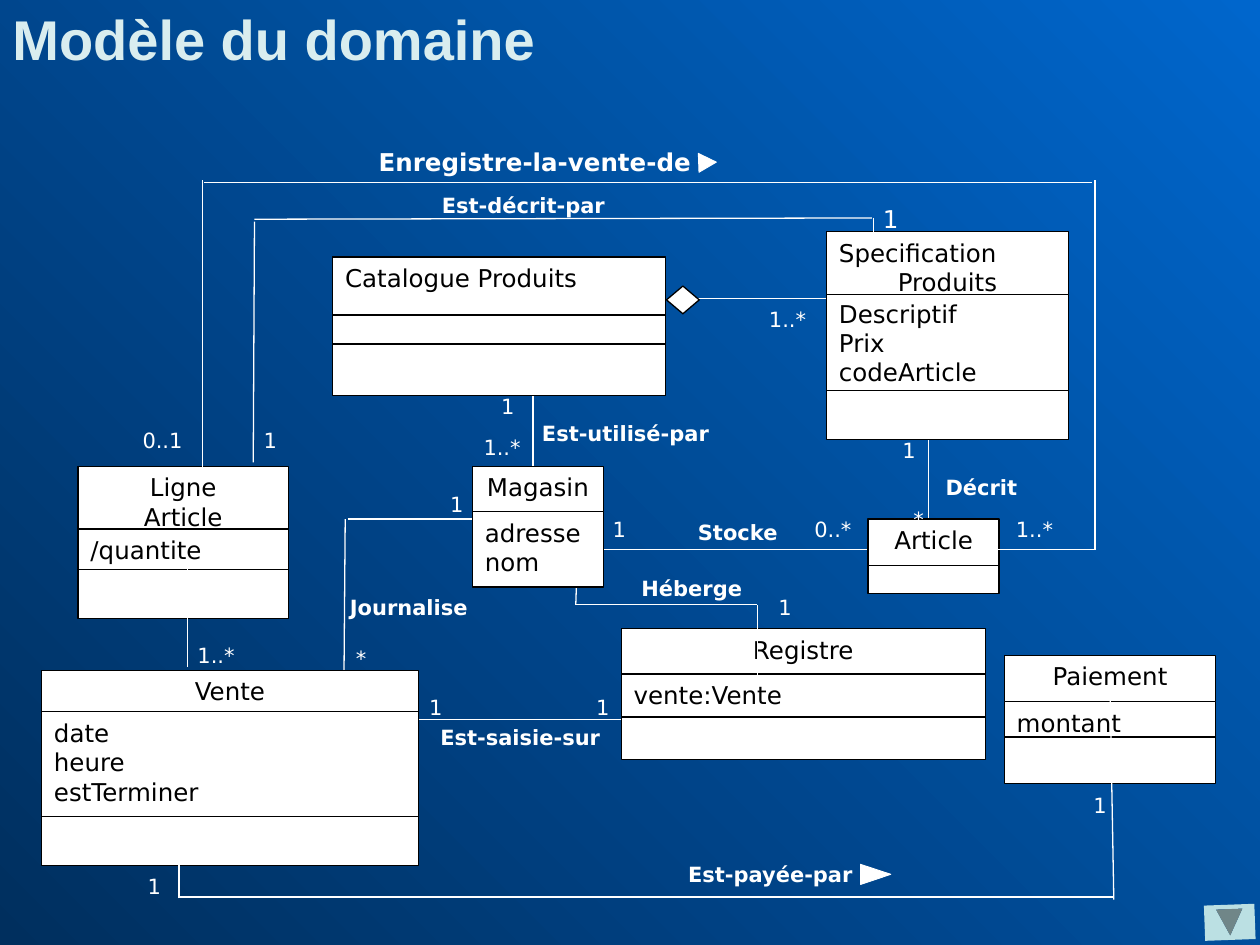
from pptx import Presentation
from pptx import util as u
from pptx.dml import color
from pptx.enum import shapes, text
from pptx.oxml import ns
from lxml import etree

SANS = "DejaVu Sans"
LEFT, MID = text.PP_ALIGN.LEFT, text.PP_ALIGN.CENTER
KIND = shapes.MSO_SHAPE

# Each class: left, width, then compartments of (top, height, lines, alignments)
CLASSES = {
    "Catalogue": (2.64, 2.64, [(2.04, 0.47, ["Catalogue Produits"], [LEFT]),
                               (2.5, 0.23, [], []), (2.73, 0.41, [], [])]),
    "Specification": (6.56, 1.92, [
        (2.32, 0.78, ["Descriptif", "Prix", "codeArticle"], [LEFT] * 3),
        (1.84, 0.5, ["Specification", "Produits"], [LEFT, MID]),
        (3.1, 0.39, [], [])]),
    "Magasin": (3.75, 1.04, [(3.7, 0.38, ["Magasin"], [MID]),
                             (4.06, 0.6, ["adresse", "nom"], [LEFT] * 2)]),
    "Article": (6.89, 1.04, [(4.12, 0.37, ["Article"], [MID]),
                             (4.49, 0.22, [], [])]),
    "Ligne": (0.62, 1.67, [(3.7, 0.5, ["Ligne", "Article"], [MID] * 2),
                           (4.2, 0.32, ["/quantite"], [LEFT]),
                           (4.52, 0.39, [], [])]),
    "Vente": (0.33, 2.99, [
        (5.32, 0.33, ["Vente"], [MID]),
        (5.65, 0.84, ["date", "heure", "estTerminer"], [LEFT] * 3),
        (6.48, 0.39, [], [])]),
    "Registre": (4.93, 2.89, [(4.99, 0.38, ["Registre"], [MID]),
                              (5.69, 0.34, [], []),
                              (5.35, 0.34, ["vente:Vente"], [LEFT])]),
    "Paiement": (7.97, 1.68, [(5.57, 0.28, ["montant"], [LEFT]),
                              (5.2, 0.37, ["Paiement"], [MID]),
                              (5.85, 0.37, [], [])]),
}

BACK = {
    "contient": (5.36, 2.37, 6.56, 2.37),
    "utilise": (4.23, 2.99, 4.23, 3.7),
    "heberge": (4.58, 4.48, 4.57, 4.8),
    "stocke": (4.79, 4.36, 6.89, 4.36),
    "decrit": (7.37, 3.49, 7.37, 4.12),
    "saisie": (3.07, 5.71, 5.13, 5.71),
    "journal": (2.73, 5.38, 2.74, 4.12),
    "journal haut": (2.76, 4.12, 3.78, 4.12),
}

FRONT = [
    (1.49, 4.42, 1.49, 5.29),
    (1.61, 1.43, 1.61, 3.72), (1.62, 1.45, 8.67, 1.45),
    (8.69, 1.43, 8.69, 4.36), (8.7, 4.36, 7.57, 4.36),
    (2.02, 1.76, 2.01, 3.67), (2.02, 1.74, 6.92, 1.73),
    (6.93, 1.73, 6.93, 1.98),
    (1.42, 7.13, 1.42, 6.53), (1.42, 7.12, 8.84, 7.12),
    (8.84, 7.14, 8.81, 5.46),
    (4.57, 4.8, 6.01, 4.8), (6.01, 4.8, 6.01, 5.47),
]

NAMES = [
    ("Enregistre-la-vente-de", 2.57, 1.12, 3.35, 0.25, 14),
    ("Est-décrit-par", 2.89, 1.48, 2.53, 0.2, 12),
    ("Est-utilisé-par", 4.1, 3.29, 1.73, 0.27, 12),
    ("Héberge", 4.83, 4.52, 1.32, 0.27, 12),
    ("Stocke", 5.28, 4.07, 1.15, 0.22, 12),
    ("Journalise", 2.46, 4.67, 1.57, 0.24, 12),
    ("Est-saisie-sur", 2.81, 5.7, 2.64, 0.22, 12),
    ("Décrit", 7.31, 3.72, 0.96, 0.25, 12),
    ("Est-payée-par", 5.13, 6.79, 1.97, 0.23, 12),
]

COUNTS = [
    ("1..*", 5.89, 2.38, 0.72, 0.25, 12), ("1..*", 3.63, 3.4, 0.71, 0.16, 12),
    ("*", 7.09, 3.97, 0.4, 0.25, 12), ("1", 4.63, 4.05, 0.57, 0.25, 12),
    ("0..*", 6.25, 4.05, 0.72, 0.23, 12), ("1..*", 7.85, 4.05, 0.72, 0.23, 12),
    ("1", 5.86, 4.67, 0.74, 0.17, 12), ("0..1", 0.88, 3.34, 0.82, 0.25, 12),
    ("1..*", 1.43, 5.05, 0.57, 0.26, 12), ("1", 3.21, 5.46, 0.5, 0.27, 12),
    ("1", 3.39, 3.87, 0.47, 0.08, 12), ("1", 4.58, 5.46, 0.41, 0.25, 12),
    ("1", 8.48, 6.24, 0.5, 0.19, 12), ("1", 0.95, 6.88, 0.55, 0.25, 12),
    ("1", 3.57, 3.07, 0.92, 0.25, 12), ("1", 1.87, 3.34, 0.55, 0.15, 12),
    ("1", 6.76, 1.57, 0.62, 0.28, 14), ("*", 2.57, 5.07, 0.59, 0.15, 12),
    ("1", 6.94, 3.42, 0.55, 0.15, 12),
]


def tint(target, code):
    """Give a colour object the value of a hex string."""
    target.rgb = color.RGBColor.from_string(code)


def write(shape, lines, aligns, code, **form):
    """Write aligned paragraphs into a shape with one font format."""
    frame = shape.text_frame
    frame.word_wrap = True
    frame.vertical_anchor = text.MSO_ANCHOR.TOP
    for i, (line, align) in enumerate(zip(lines, aligns)):
        para = frame.add_paragraph() if i else frame.paragraphs[0]
        para.alignment = align
        run = para.add_run()
        run.text = line
        tint(run.font.color, code)
        for key, value in form.items():
            setattr(run.font, key, value)


def block(slide, kind, place, fill="FFFFFF", edge="000000", width=0.75, turn=0):
    """Add a filled preset shape; no outline when edge is None."""
    shape = slide.shapes.add_shape(kind, *map(u.Inches, place))
    shape.shadow.inherit = False
    shape.rotation = turn
    shape.fill.solid()
    tint(shape.fill.fore_color, fill)
    if edge:
        tint(shape.line.color, edge)
        shape.line.width = u.Pt(width)
    else:
        shape.line.fill.background()
    return shape


def label(slide, words, place, size, code="FFFFFF", align=MID, **form):
    """Add a one-line text box."""
    box = slide.shapes.add_textbox(*map(u.Inches, place))
    write(box, [words], [align], code, size=u.Pt(size), **form)


def link(slide, ends):
    """Add a thin white straight connector."""
    line = slide.shapes.add_connector(
        shapes.MSO_CONNECTOR.STRAIGHT, *map(u.Inches, ends))
    tint(line.line.color, "FFFFFF")
    line.line.width = u.Pt(0.75)
    etree.SubElement(line._element.spPr, ns.qn("a:effectLst"))
    return line


def entity(slide, left, width, parts):
    """Add the stacked compartments of a class and return them."""
    made = []
    for top, high, lines, aligns in parts:
        part = block(slide, KIND.RECTANGLE, (left, top, width, high))
        write(part, lines, aligns, "000000", size=u.Pt(14), name=SANS)
        made.append(part)
    return made


def shade(slide):
    """Fill the background with a diagonal blue gradient."""
    fill = slide.background.fill
    fill.gradient()
    fill.gradient_angle = 45
    for stop, code in zip(fill.gradient_stops, ("002F5E", "0066CC")):
        tint(stop.color, code)


def main():
    """Build the domain model slide."""
    deck = Presentation()
    deck.slide_width, deck.slide_height = u.Inches(10), u.Inches(7.5)
    slide = deck.slides.add_slide(deck.slide_layouts[6])
    shade(slide)
    back = {name: link(slide, ends) for name, ends in BACK.items()}
    made = {name: entity(slide, *data) for name, data in CLASSES.items()}
    back["stocke"].begin_connect(made["Magasin"][1], 3)
    block(slide, KIND.DIAMOND, (5.29, 2.27, 0.26, 0.22))
    for ends in FRONT:
        link(slide, ends)
    for bold, group in ((True, NAMES), (False, COUNTS)):
        for words, *place, size in group:
            label(slide, words, place, size, name=SANS, bold=bold)
    for place, turn in (((6.87, 6.82, 0.16, 0.24), 89.8),
                        ((5.54, 1.22, 0.15, 0.14), 87.8)):
        block(slide, KIND.ISOSCELES_TRIANGLE, place, edge="FFFFFF",
              width=0.5, turn=turn)
    label(slide, "Modèle du domaine", (0, -0.01, 10, 0.63), 32, "D9EDEF",
          LEFT, name="Arial", bold=True)
    block(slide, KIND.ACTION_BUTTON_BACK_OR_PREVIOUS, (9.62, 7.12, 0.28, 0.4),
          "BBE0E3", None, turn=267.9)
    deck.save("out.pptx")


if __name__ == "__main__":
    main()
